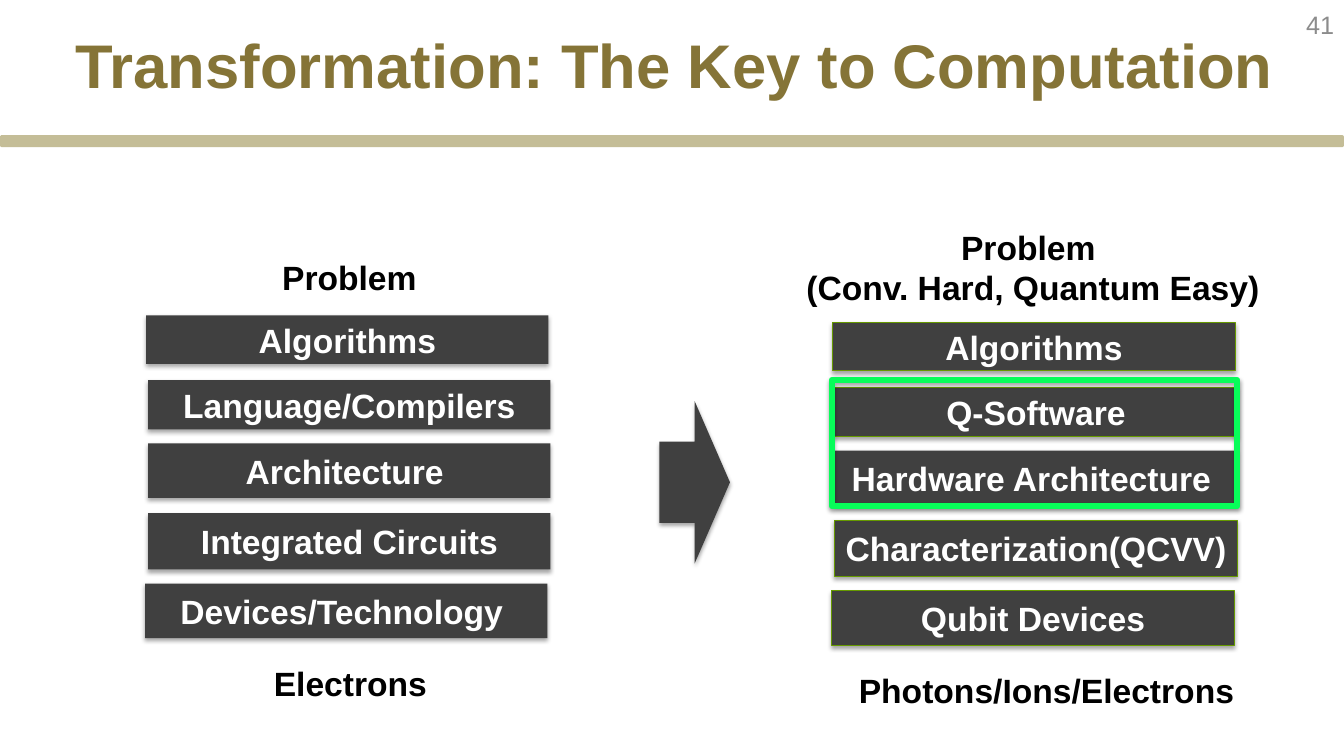
"""Build the slide comparing the classical and quantum computing stacks."""
from lxml.etree import SubElement
from pptx import Presentation
from pptx.dml.color import RGBColor
from pptx.enum.shapes import MSO_SHAPE
from pptx.enum.text import MSO_ANCHOR, PP_ALIGN
from pptx.oxml.ns import qn
from pptx.util import Inches, Pt

WHITE = RGBColor(0xFF, 0xFF, 0xFF)
BLACK = RGBColor(0x00, 0x00, 0x00)
CHARCOAL = RGBColor(0x40, 0x40, 0x40)
GRAY = RGBColor(0x8C, 0x8C, 0x8C)
GOLD = RGBColor(0x85, 0x74, 0x37)
SAND = RGBColor(0xC4, 0xBD, 0x97)
OLIVE = RGBColor(0x66, 0x99, 0x00)
NEON = RGBColor(0x07, 0xFD, 0x59)

LAYER_WIDTH = 3.99
QUANTUM_SHIFT = (6.81, 0.07)
LAYERS = [
    (1.45, 3.13, 0.48, "Algorithms", "Algorithms", OLIVE),
    (1.47, 3.77, 0.49, "Language/Compilers", "Q-Software", OLIVE),
    (1.47, 4.40, 0.54, "Architecture ", "Hardware Architecture ", None),
    (1.47, 5.09, 0.56, "Integrated Circuits", "Characterization(QCVV)", OLIVE),
    (1.44, 5.79, 0.54, "Devices/Technology ", "Qubit Devices", OLIVE),
]
STACK_ENDS = [
    ((1.47, 2.48, 3.99, 0.54), ["Problem"]),
    ((1.48, 6.51, 3.99, 0.54), ["Electrons"]),
    ((7.82, 2.38, 4.85, 0.54), ["Problem ", "(Conv. Hard, Quantum Easy)"]),
    ((8.11, 6.58, 4.54, 0.54), ["Photons/Ions/Electrons"]),
]


class StackSlide:
    """Hold the text style and the slide being drawn."""

    def __init__(self, slide):
        self.shapes = slide.shapes
        self.font_format = {"name": "Arial", "size": Pt(24), "bold": True}

    def fill_text(self, frame, lines, color, align=PP_ALIGN.CENTER,
                  anchor=MSO_ANCHOR.MIDDLE, **changes):
        """Fill a text frame with one paragraph per line."""
        frame.word_wrap = True
        frame.vertical_anchor = anchor
        for index, line in enumerate(lines):
            paragraph = frame.add_paragraph() if index else frame.paragraphs[0]
            paragraph.alignment = align
            run = paragraph.add_run()
            run.text = line
            for name, value in {**self.font_format, **changes}.items():
                setattr(run.font, name, value)
            run.font.color.rgb = color

    def label(self, place, lines, color=BLACK, **style):
        """Add plain text."""
        box = self.shapes.add_textbox(*map(Inches, place))
        self.fill_text(box.text_frame, lines, color, **style)

    def block(self, place, kind=MSO_SHAPE.RECTANGLE, fill=CHARCOAL,
              outline=None, weight=0.75, shadow=True):
        """Add a preset shape with optional fill, outline and shadow."""
        block = self.shapes.add_shape(kind, *map(Inches, place))
        if fill is None:
            block.fill.background()
        else:
            block.fill.solid()
            block.fill.fore_color.rgb = fill
        if outline is None:
            block.line.fill.background()
        else:
            block.line.color.rgb = outline
            block.line.width = Pt(weight)
        block.shadow.inherit = False
        if shadow:
            self.cast_shadow(block)
        return block

    def cast_shadow(self, block):
        """Give a shape a soft shadow straight below it."""
        effects = block.element.spPr.find(qn("a:effectLst"))
        outer = SubElement(effects, qn("a:outerShdw"), blurRad=str(Pt(3.1)),
                           dist=str(Pt(1.8)), dir="5400000", rotWithShape="0")
        tint = SubElement(outer, qn("a:srgbClr"), val=str(BLACK))
        SubElement(tint, qn("a:alpha"), val="35000")

    def layer(self, left, top, height, name, outline=None):
        """Add one named layer of a stack."""
        layer = self.block((left, top, LAYER_WIDTH, height), outline=outline)
        self.fill_text(layer.text_frame, [name], WHITE)


def main():
    """Draw the slide and save it."""
    deck = Presentation()
    deck.slide_width, deck.slide_height = Inches(13.33), Inches(7.5)
    page = StackSlide(deck.slides.add_slide(deck.slide_layouts[6]))

    page.block((0, 1.34, 13.33, 0.12), MSO_SHAPE.ROUNDED_RECTANGLE, SAND,
               shadow=False)
    page.label((0.65, 0.22, 12.39, 1.36),
               ["Transformation: The Key to Computation"], GOLD,
               align=PP_ALIGN.LEFT, anchor=MSO_ANCHOR.TOP, size=Pt(44))
    page.label((11.61, 0, 1.72, 0.48), ["41"], GRAY, align=PP_ALIGN.RIGHT,
               size=Pt(18), bold=False)

    for place, lines in STACK_ENDS:
        page.label(place, lines)
    shift_x, shift_y = QUANTUM_SHIFT
    for left, top, height, classical, quantum, outline in LAYERS:
        page.layer(left, top, height, classical)
        page.layer(left + shift_x, top + shift_y, height, quantum, outline)

    page.block((6.54, 3.98, 0.7, 1.61), MSO_SHAPE.RIGHT_ARROW)
    page.block((8.25, 3.77, 4.02, 1.25), fill=None, outline=NEON, weight=4.5)
    deck.save("out.pptx")


if __name__ == "__main__":
    main()
